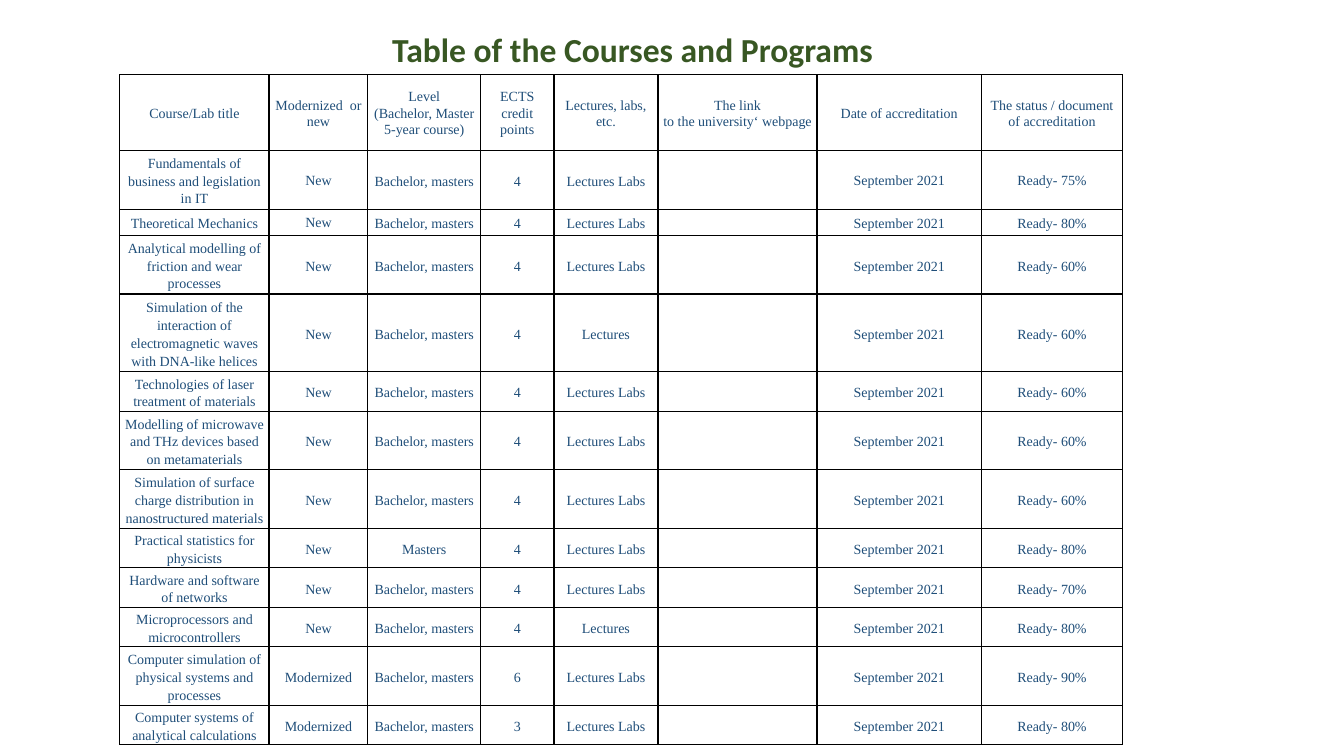
from lxml import etree
from pptx import Presentation
from pptx.dml.color import RGBColor
from pptx.enum.text import MSO_ANCHOR, PP_ALIGN
from pptx.oxml.ns import qn
from pptx.util import Cm, Pt

GREEN = RGBColor(0x38, 0x57, 0x23)
BLUE = RGBColor(0x1F, 0x4E, 0x79)
BLACK = RGBColor(0x00, 0x00, 0x00)
LEFT, CENTER = PP_ALIGN.LEFT, PP_ALIGN.CENTER
TOP, MIDDLE = MSO_ANCHOR.TOP, MSO_ANCHOR.MIDDLE

TITLE_BOX = (9.63, 0.61, 14.81, 1.27)
TABLE_BOX = (3.02, 1.88, 25.27, 16.88)
COLUMN_WIDTHS = (3.76, 2.49, 2.84, 1.85, 2.62, 4.01, 4.14, 3.56)
HEADER_HEIGHT = 1.91
HEIGHT_BY_LINES = {1: 0.66, 2: 0.99, 3: 1.48, 4: 1.96}
TIGHT_CELLS = {(1, 1), (1, 6), (1, 7), (2, 1)}

HEADERS = (
    "Course/Lab title",
    "Modernized  or new",
    "Level\n(Bachelor, Master\n5-year course)",
    "ECTS credit points",
    "Lectures, labs, etc.",
    "The link\nto the university‘ webpage",
    "Date of accreditation",
    "The status / document of accreditation",
)
BOTH_LEVELS = "Bachelor, masters"
WITH_LABS = "Lectures Labs"
ACCREDITED = "September 2021"
COURSES = (
    (3, "Fundamentals of business and legislation in IT", "New", BOTH_LEVELS, 4, WITH_LABS, 75),
    (1, "Theoretical Mechanics", "New", BOTH_LEVELS, 4, WITH_LABS, 80),
    (3, "Analytical modelling of friction and wear processes", "New", BOTH_LEVELS, 4, WITH_LABS, 60),
    (4, "Simulation of the interaction of electromagnetic waves with DNA-like helices",
     "New", BOTH_LEVELS, 4, "Lectures", 60),
    (2, "Technologies of laser treatment of materials", "New", BOTH_LEVELS, 4, WITH_LABS, 60),
    (3, "Modelling of microwave and THz devices based on metamaterials",
     "New", BOTH_LEVELS, 4, WITH_LABS, 60),
    (3, "Simulation of surface charge distribution in nanostructured materials",
     "New", BOTH_LEVELS, 4, WITH_LABS, 60),
    (2, "Practical statistics for physicists", "New", "Masters", 4, WITH_LABS, 80),
    (2, "Hardware and software of networks", "New", BOTH_LEVELS, 4, WITH_LABS, 70),
    (2, "Microprocessors and microcontrollers", "New", BOTH_LEVELS, 4, "Lectures", 80),
    (3, "Computer simulation of physical systems and processes",
     "Modernized", BOTH_LEVELS, 6, WITH_LABS, 90),
    (2, "Computer systems of analytical calculations", "Modernized", BOTH_LEVELS, 3, WITH_LABS, 80),
)


def write_text(frame, text, *, font, size, color, bold=False, align=LEFT, spacing=1.0, after=0):
    """Write each line of text as one formatted paragraph."""
    for index, line in enumerate(text.split("\n")):
        paragraph = frame.add_paragraph() if index else frame.paragraphs[0]
        paragraph.alignment = align
        paragraph.line_spacing = spacing
        paragraph.space_before = Pt(0)
        paragraph.space_after = Pt(after)
        if not line:
            etree.SubElement(paragraph._p, qn("a:endParaRPr"), sz=str(size * 100))
            continue
        run = paragraph.add_run()
        run.text = line
        run.font.name = font
        run.font.size = Pt(size)
        run.font.bold = bold
        run.font.color.rgb = color


def draw_borders(cell):
    """Give the cell a thin black line on all four sides."""
    properties = cell._tc.get_or_add_tcPr()
    for side in ("a:lnL", "a:lnR", "a:lnT", "a:lnB"):
        line = etree.SubElement(properties, qn(side), w=str(Pt(1)))
        fill = etree.SubElement(line, qn("a:solidFill"))
        etree.SubElement(fill, qn("a:srgbClr"), val=str(BLACK))


def fill_cell(cell, text, tight):
    """Lay out one table cell with its text, margins and borders."""
    cell.margin_left = cell.margin_right = Cm(0.1)
    cell.margin_top, cell.margin_bottom = Cm(0.03), Cm(0)
    cell.vertical_anchor = MIDDLE
    draw_borders(cell)
    cell.fill.background()
    write_text(cell.text_frame, text, font="Times New Roman", size=10, color=BLUE,
               align=CENTER, spacing=1.06 if tight else 1.15, after=0 if tight else 10)


def add_heading(slide, box):
    """Place the slide title in the given box."""
    heading = slide.shapes.title
    heading.left, heading.top, heading.width, heading.height = map(Cm, box)
    frame = heading.text_frame
    frame.word_wrap = True
    frame.vertical_anchor = TOP
    write_text(frame, "Table of the Courses and Programs",
               font="Calibri", size=24, color=GREEN, bold=True)


def add_course_table(slide, box):
    """Place the table of courses in the given box."""
    rows = [HEADERS]
    heights = [HEADER_HEIGHT]
    for lines, course, novelty, level, credits, teaching, ready in COURSES:
        rows.append((course, novelty, level, str(credits), teaching, "",
                     ACCREDITED, f"Ready- {ready}%"))
        heights.append(HEIGHT_BY_LINES[lines])

    table = slide.shapes.add_table(len(rows), len(HEADERS), *map(Cm, box)).table
    table.first_row = False
    table.horz_banding = False
    for column, width in zip(table.columns, COLUMN_WIDTHS):
        column.width = Cm(width)
    for row_index, (texts, height) in enumerate(zip(rows, heights)):
        table.rows[row_index].height = Cm(height)
        for column_index, text in enumerate(texts):
            tight = row_index == 0 or (row_index, column_index) in TIGHT_CELLS
            fill_cell(table.cell(row_index, column_index), text, tight)


def main():
    """Build the presentation and save it."""
    presentation = Presentation()
    presentation.slide_width, presentation.slide_height = Cm(33.87), Cm(19.05)
    slide = presentation.slides.add_slide(presentation.slide_layouts[5])
    add_heading(slide, TITLE_BOX)
    add_course_table(slide, TABLE_BOX)
    presentation.save("out.pptx")


if __name__ == "__main__":
    main()
